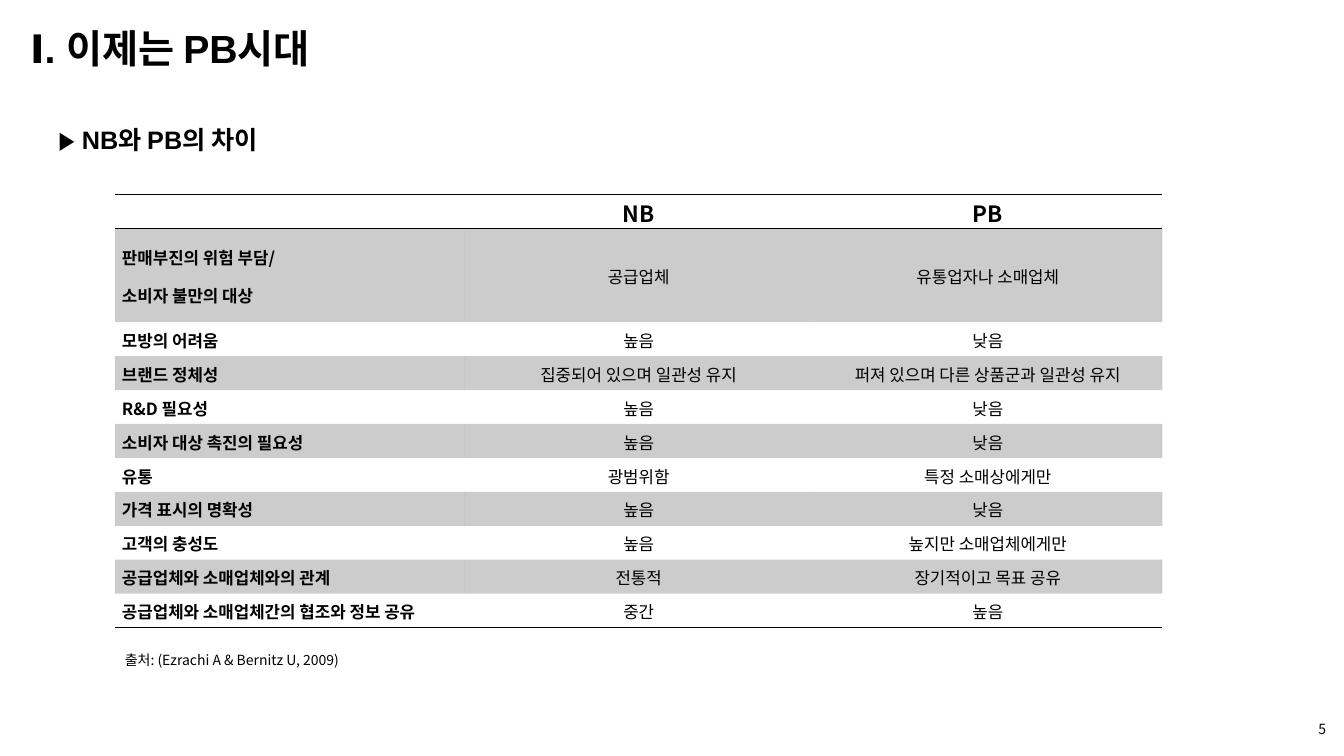
from lxml.etree import SubElement
from pptx import Presentation
from pptx.dml.color import RGBColor
from pptx.enum.text import MSO_ANCHOR, MSO_AUTO_SIZE, PP_ALIGN
from pptx.oxml.ns import qn
from pptx.util import Inches, Pt

SLIDE_WIDTH, SLIDE_HEIGHT = 13.33, 7.5
BLACK = "000000"
HEADING_FONT, BODY_FONT = "Arial", "Noto Sans CJK KR"
NO_TABLE_STYLE = "{2D5ABB26-0587-4C30-8999-92F81FD0307C}"
TABLE_LEFT, TABLE_TOP, TABLE_WIDTH, TABLE_HEIGHT = 1.14, 1.93, 10.39, 4.3
TALL_ROW, TALL_ROW_HEIGHT = 1, 0.93
COMPARISON = [
    ("", "NB", "PB"),
    ("판매부진의 위험 부담/\n소비자 불만의 대상", "공급업체", "유통업자나 소매업체"),
    ("모방의 어려움", "높음", "낮음"),
    ("브랜드 정체성", "집중되어 있으며 일관성 유지", "퍼져 있으며 다른 상품군과 일관성 유지"),
    ("R&D 필요성", "높음", "낮음"),
    ("소비자 대상 촉진의 필요성", "높음", "낮음"),
    ("유통", "광범위함", "특정 소매상에게만"),
    ("가격 표시의 명확성", "높음", "낮음"),
    ("고객의 충성도", "높음", "높지만 소매업체에게만"),
    ("공급업체와 소매업체와의 관계", "전통적", "장기적이고 목표 공유"),
    ("공급업체와 소매업체간의 협조와 정보 공유", "중간", "높음"),
]


def color(hex_code):
    """Turn a hex string into a colour."""
    return RGBColor.from_string(hex_code)


def write(frame, text, size, font=BODY_FONT, bold=False,
          align=PP_ALIGN.JUSTIFY, spacing=1.07, after=8):
    """Fill a text frame, one paragraph per line of text."""
    frame.text = text
    for paragraph in frame.paragraphs:
        paragraph.alignment = align
        paragraph.line_spacing = spacing
        paragraph.space_after = Pt(after)
        paragraph.font.size = Pt(size)
        paragraph.font.bold = bold
        paragraph.font.color.rgb = color(BLACK)
        paragraph.font.name = font
        defaults = paragraph.font._element if hasattr(paragraph.font, "_element") else paragraph.font._rPr
        SubElement(defaults, qn("a:ea"), typeface=BODY_FONT)


def add_label(slide, left, top, width, height, text, size, grow=False,
              anchor=MSO_ANCHOR.TOP, **style):
    """Place a wrapped text box given in inches."""
    frame = slide.shapes.add_textbox(*map(Inches, (left, top, width, height))).text_frame
    frame.word_wrap = True
    frame.vertical_anchor = anchor
    if grow:
        frame.auto_size = MSO_AUTO_SIZE.SHAPE_TO_FIT_TEXT
    write(frame, text, size, **style)


def rule_edge(cell, edge):
    """Draw a thin black border on one edge of a cell."""
    line = SubElement(cell._tc.get_or_add_tcPr(), qn(f"a:{edge}"), w=str(Pt(1)))
    fill = SubElement(line, qn("a:solidFill"))
    SubElement(fill, qn("a:srgbClr"), val=BLACK)


def shade(cell):
    """Fill a cell with black at one fifth opacity."""
    cell.fill.solid()
    cell.fill.fore_color.rgb = color(BLACK)
    tint = cell._tc.tcPr.find(f".//{qn('a:srgbClr')}")
    SubElement(tint, qn("a:alpha"), val="20000")


def add_comparison(slide):
    """Build the ruled and striped comparison table."""
    last = len(COMPARISON) - 1
    columns = len(COMPARISON[0])
    area = map(Inches, (TABLE_LEFT, TABLE_TOP, TABLE_WIDTH, TABLE_HEIGHT))
    table = slide.shapes.add_table(last + 1, columns, *area).table
    table.first_row = table.horz_banding = False
    table._tbl.tblPr.find(qn("a:tableStyleId")).text = NO_TABLE_STYLE
    row_height = (TABLE_HEIGHT - TALL_ROW_HEIGHT) / last
    for row, texts in enumerate(COMPARISON):
        table.rows[row].height = Inches(TALL_ROW_HEIGHT if row == TALL_ROW else row_height)
        header = row == 0
        edges = ["lnT", "lnB"] if header else ["lnB"] if row == last else []
        for column, text in enumerate(texts):
            cell = table.cell(row, column)
            cell.margin_left = cell.margin_right = Inches(0.07)
            cell.margin_top = cell.margin_bottom = 0
            cell.vertical_anchor = MSO_ANCHOR.MIDDLE
            write(cell.text_frame, text, 16 if header else 12,
                  bold=header or column == 0,
                  align=PP_ALIGN.CENTER if column else PP_ALIGN.JUSTIFY)
            for edge in edges:
                rule_edge(cell, edge)
            if row % 2:
                shade(cell)


def main():
    """Build and save the slide."""
    deck = Presentation()
    deck.slide_width, deck.slide_height = Inches(SLIDE_WIDTH), Inches(SLIDE_HEIGHT)
    slide = deck.slides.add_slide(deck.slide_layouts[6])
    add_label(slide, 10.25, 7.03, 3, 0.4, "5", 10, anchor=MSO_ANCHOR.MIDDLE,
              align=PP_ALIGN.RIGHT, spacing=1, after=0)
    add_label(slide, 0.2, 0.24, 6.95, 0.63, "Ⅰ. 이제는 PB시대", 28, font=HEADING_FONT,
              bold=True, align=PP_ALIGN.LEFT, spacing=0.9, after=0)
    add_label(slide, 0.48, 1, 6.67, 0.52, "▶ NB와 PB의 차이", 18, grow=True,
              font=HEADING_FONT, bold=True, spacing=1.6)
    add_comparison(slide)
    add_label(slide, 1.14, 6.4, 6.67, 0.27, "출처: (Ezrachi A & Bernitz U, 2009)", 10, grow=True)
    deck.save("out.pptx")


if __name__ == "__main__":
    main()
